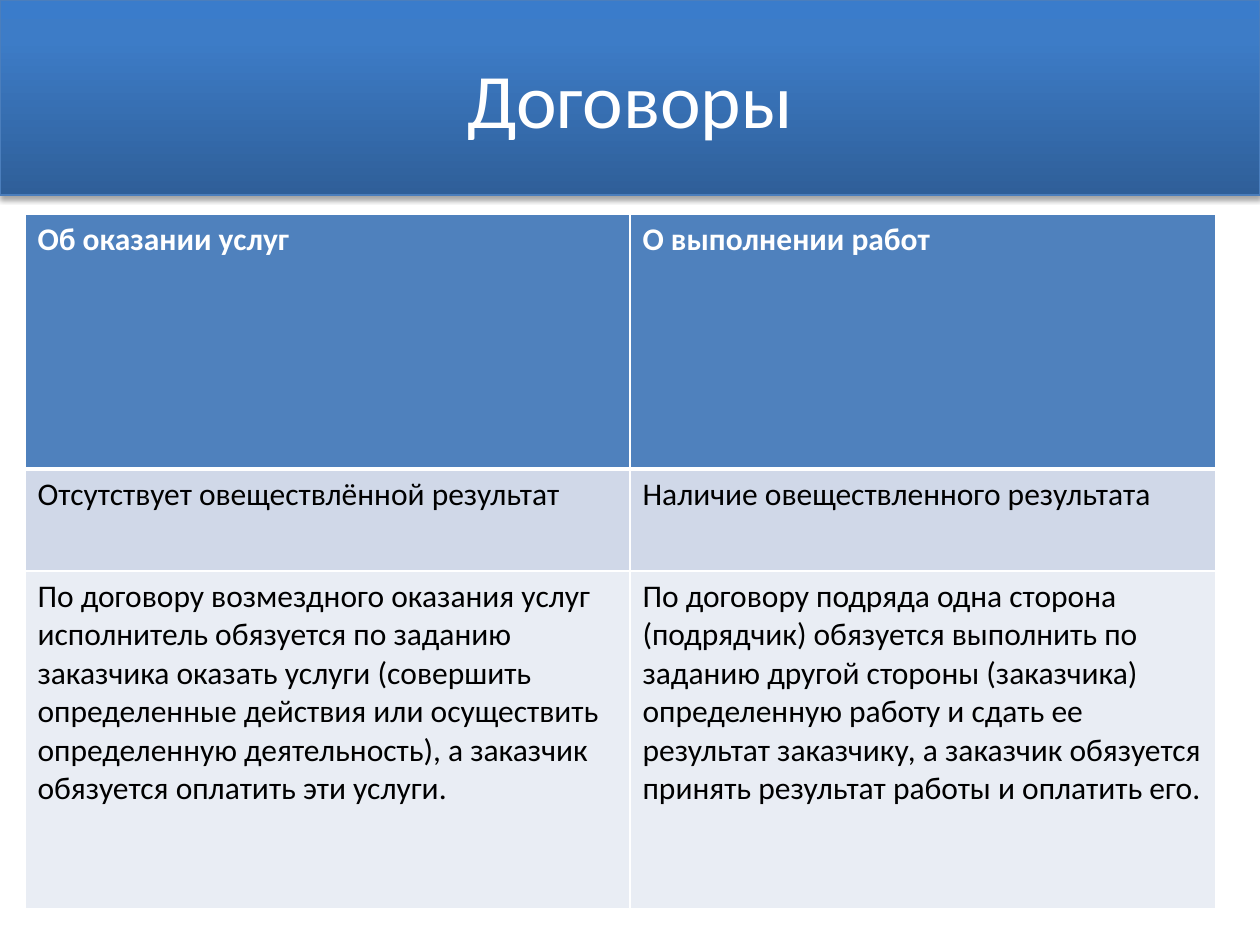
from copy import deepcopy

from lxml.etree import SubElement
from pptx import Presentation
from pptx.dml.color import RGBColor
from pptx.enum.shapes import MSO_SHAPE
from pptx.enum.text import MSO_ANCHOR, PP_ALIGN
from pptx.oxml.ns import qn
from pptx.util import Emu, Pt

PX_PER_INCH = 126


def px(n):
    return Emu(round(n * 914400 / PX_PER_INCH))


def rgb(value):
    return RGBColor.from_string(value)


class Deck:
    font = "Calibri"
    white = "FFFFFF"
    black = "000000"
    outline = "4B7EBC"
    banner = [(0, "2F5F99"), (0.8, "3D7CC7"), (1, "3A7CCB")]
    row_fills = ["4F81BD", "D0D8E8", "E9EDF4"]

    def __init__(self, width, height):
        self.prs = Presentation()
        self.prs.slide_width, self.prs.slide_height = px(width), px(height)
        self.slide = None

    def add_slide(self):
        self.slide = self.prs.slides.add_slide(self.prs.slide_layouts[6])

    def set_text(self, p, text, size, color, bold=False):
        p.text = text
        p.font.name = self.font
        p.font.size = Pt(size)
        p.font.bold = bold
        p.font.color.rgb = rgb(color)

    def gradient(self, sp, stops):
        sp.fill.gradient()
        sp.fill.gradient_angle = 90
        gs_list = sp._element.spPr.find(qn("a:gradFill")).find(qn("a:gsLst"))
        while len(gs_list) < len(stops):
            gs_list.append(deepcopy(gs_list[0]))
        for stop, (position, color) in zip(sp.fill.gradient_stops, stops):
            stop.position = position
            stop.color.rgb = rgb(color)

    def shadow(self, sp):
        sp.shadow.inherit = False
        effects = sp._element.spPr.find(qn("a:effectLst"))
        outer = SubElement(effects, qn("a:outerShdw"), blurRad=str(Pt(3.1)),
                           dist=str(Pt(1.8)), dir="5400000", rotWithShape="0")
        color = SubElement(outer, qn("a:srgbClr"), val=self.black)
        SubElement(color, qn("a:alpha"), val="35000")

    def title(self, text, x, y, w, h):
        sp = self.slide.shapes.add_shape(MSO_SHAPE.RECTANGLE, px(x), px(y), px(w), px(h))
        self.gradient(sp, self.banner)
        sp.line.color.rgb = rgb(self.outline)
        sp.line.width = Pt(0.75)
        self.shadow(sp)
        tf = sp.text_frame
        tf.word_wrap = True
        tf.vertical_anchor = MSO_ANCHOR.MIDDLE
        p = tf.paragraphs[0]
        p.alignment = PP_ALIGN.CENTER
        self.set_text(p, text, 44, self.white)

    def borders(self, cell, widths):
        tc_pr = cell._tc.get_or_add_tcPr()
        for side, width in widths.items():
            ln = SubElement(tc_pr, qn(f"a:ln{side}"), w=str(Pt(width)))
            fill = SubElement(ln, qn("a:solidFill"))
            SubElement(fill, qn("a:srgbClr"), val=self.white)

    def table(self, rows, x, y, widths, heights):
        frame = self.slide.shapes.add_table(
            len(rows), len(widths), px(x), px(y), px(sum(widths)), px(sum(heights)))
        table = frame.table
        for column, width in zip(table.columns, widths):
            column.width = px(width)
        for i, texts in enumerate(rows):
            table.rows[i].height = px(heights[i])
            header = i == 0
            for j, text in enumerate(texts):
                cell = table.cell(i, j)
                self.borders(cell, {"L": 1, "R": 1, "T": 3 if i == 1 else 1,
                                    "B": 3 if header else 1})
                cell.fill.solid()
                cell.fill.fore_color.rgb = rgb(self.row_fills[i])
                color = self.white if header else self.black
                self.set_text(cell.text_frame.paragraphs[0], text, 18, color, header)


def main():
    deck = Deck(1260, 945)
    deck.add_slide()
    deck.title("Договоры", 0, 0, 1260, 195)
    contracts = [
        ("Об оказании услуг", "О выполнении работ"),
        ("Отсутствует овеществлённой результат", "Наличие овеществленного результата"),
        ("По договору возмездного оказания услуг исполнитель обязуется по заданию "
         "заказчика оказать услуги (совершить определенные действия или осуществить "
         "определенную деятельность), а заказчик обязуется оплатить эти услуги.",
         "По договору подряда одна сторона (подрядчик) обязуется выполнить по заданию "
         "другой стороны (заказчика) определенную работу и сдать ее результат заказчику, "
         "а заказчик обязуется принять результат работы и оплатить его."),
    ]
    deck.table(contracts, 25, 214, [605, 586], [255, 102, 338])
    deck.prs.save("out.pptx")


if __name__ == "__main__":
    main()
